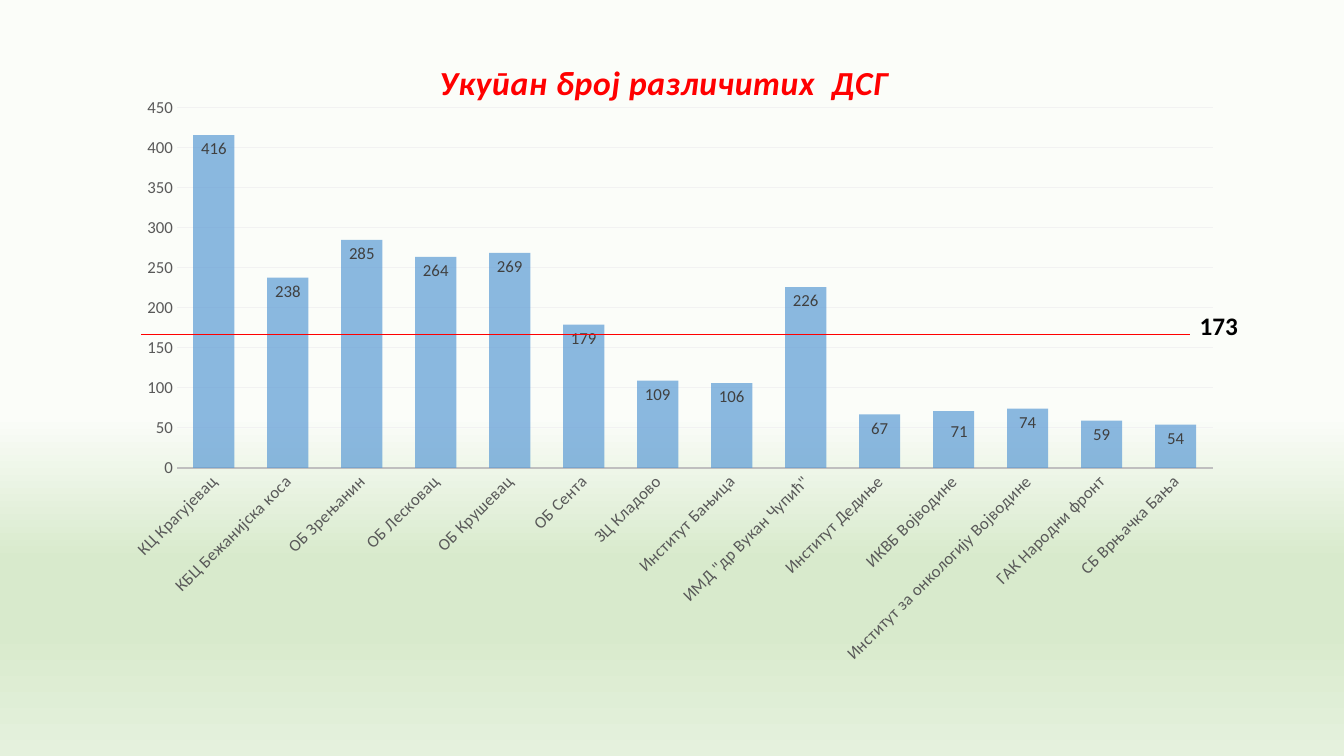
import pptx
import pptx.chart.data
import pptx.dml.color
import pptx.enum.chart
import pptx.enum.shapes
import pptx.enum.text
import pptx.oxml
import pptx.oxml.ns
import pptx.util
from lxml import etree

Inches = pptx.util.Inches
Pt = pptx.util.Pt
RGBColor = pptx.dml.color.RGBColor
qn = pptx.oxml.ns.qn

RED = RGBColor(0xFF, 0x00, 0x00)
BLACK = RGBColor(0x00, 0x00, 0x00)
BLUE = RGBColor(0x5B, 0x9B, 0xD5)
AXIS_TEXT = RGBColor(0x59, 0x59, 0x59)
LABEL_TEXT = RGBColor(0x40, 0x40, 0x40)
AXIS_LINE = RGBColor(0xBF, 0xBF, 0xBF)
GRID_LINE = RGBColor(0xF2, 0xF2, 0xF2)
PALE = RGBColor(0xFB, 0xFD, 0xF9)
GREEN = RGBColor(0xD8, 0xEA, 0xCC)
LIGHT_GREEN = RGBColor(0xE5, 0xF1, 0xDD)

GROUP_COUNTS = {
    "КЦ Крагујевац": 416,
    "КБЦ Бежанијска коса": 238,
    "ОБ Зрењанин": 285,
    "ОБ Лесковац": 264,
    "ОБ Крушевац": 269,
    "ОБ Сента": 179,
    "ЗЦ Кладово": 109,
    "Институт Бањица": 106,
    'ИМД "др Вукан Чупић"': 226,
    "Институт Дедиње": 67,
    "ИКВБ Војводине": 71,
    "Институт за онкологију Војводине": 74,
    "ГАК Народни фронт": 59,
    "СБ Врњачка Бања": 54,
}


def manual_layout(**settings):
    """Return a c:layout element holding the given settings in order."""
    layout = etree.Element(qn("c:layout"))
    manual = etree.SubElement(layout, qn("c:manualLayout"))
    for name, value in settings.items():
        etree.SubElement(manual, qn("c:" + name)).set("val", str(value))
    return pptx.oxml.parse_xml(etree.tostring(layout))


class Page:
    font_name = "Calibri"
    language = "sr-Cyrl-RS"

    def __init__(self, deck):
        self.slide = deck.slides.add_slide(deck.slide_layouts[6])

    def style(self, font, size, color, bold=False, italic=False):
        font.name = self.font_name
        font.size = Pt(size)
        font.color.rgb = color
        font.bold = bold
        font.italic = italic

    def letter_spacing(self, font, hundredths):
        font._element.set("lang", self.language)
        font._element.set("spc", str(hundredths))

    def background(self, stops):
        fill = self.slide.background.fill
        fill.gradient()
        fill.gradient_angle = 270
        stop_list = self.slide.background._cSld.find(".//" + qn("a:gsLst"))
        for stop in list(stop_list):
            stop_list.remove(stop)
        for percent, color in stops:
            stop = etree.SubElement(stop_list, qn("a:gs"), pos=str(percent * 1000))
            etree.SubElement(stop, qn("a:srgbClr"), val=str(color))

    def column_chart(self, left, top, width, height, counts):
        data = pptx.chart.data.CategoryChartData(number_format="0")
        data.categories = list(counts)
        data.add_series("Series 1", list(counts.values()))
        chart = self.slide.shapes.add_chart(
            pptx.enum.chart.XL_CHART_TYPE.COLUMN_CLUSTERED,
            Inches(left), Inches(top), Inches(width), Inches(height), data).chart
        chart.has_legend = False
        self.style(chart.font, 10, BLACK)
        area = chart._chartSpace.chart.plotArea
        for layout in area.findall(qn("c:layout")):
            area.remove(layout)
        area.insert(0, manual_layout(layoutTarget="inner", xMode="edge", yMode="edge",
                                     x=0.06, y=0.105, w=0.929, h=0.567))
        return chart

    def chart_title(self, chart, text, x, y):
        title = chart.chart_title
        span = title.text_frame.paragraphs[0].add_run()
        span.text = text
        self.style(span.font, 24, RED, bold=True, italic=True)
        self.letter_spacing(span.font, 50)
        element = title._element
        for layout in element.findall(qn("c:layout")):
            element.remove(layout)
        element.find(qn("c:tx")).addnext(
            manual_layout(xMode="edge", yMode="edge", x=x, y=y))
        title.include_in_layout = False

    def axes(self, chart, maximum, step):
        for axis in (chart.category_axis, chart.value_axis):
            axis.major_tick_mark = pptx.enum.chart.XL_TICK_MARK.NONE
            axis.minor_tick_mark = pptx.enum.chart.XL_TICK_MARK.NONE
            self.style(axis.tick_labels.font, 12, AXIS_TEXT)
        # Slanted category names on a grey base line
        names = chart.category_axis
        self.letter_spacing(names.tick_labels.font, 20)
        names.format.line.color.rgb = AXIS_LINE
        names.format.line.width = Pt(1.25)
        names._element.find(qn("c:txPr")).find(qn("a:bodyPr")).set("rot", "-2700000")
        # Value scale with faint grid lines
        scale = chart.value_axis
        scale.minimum_scale, scale.maximum_scale = 0, maximum
        scale.major_unit = step
        scale.tick_labels.number_format = "0"
        scale.tick_labels.number_format_is_linked = False
        scale.format.line.fill.background()
        scale.major_gridlines.format.line.color.rgb = GRID_LINE
        scale.major_gridlines.format.line.width = Pt(0.75)

    def columns(self, chart):
        plot = chart.plots[0]
        plot.gap_width, plot.overlap, plot.vary_by_categories = 80, 25, False
        series = plot.series[0]
        series.format.fill.solid()
        series.format.fill.fore_color.rgb = BLUE
        color = series._element.find(qn("c:spPr")).find(".//" + qn("a:srgbClr"))
        etree.SubElement(color, qn("a:alpha"), val="70000")
        labels = series.data_labels
        labels.show_value = True
        labels.number_format = "0"
        labels.number_format_is_linked = False
        labels.position = pptx.enum.chart.XL_LABEL_POSITION.INSIDE_END
        self.style(labels.font, 12, LABEL_TEXT)
        return series

    def shift_label(self, series, index, x, y):
        label = series.points[index].data_label
        label.position = pptx.enum.chart.XL_LABEL_POSITION.INSIDE_END
        self.style(label.font, 12, LABEL_TEXT)
        element = series._element.find(".//" + qn("c:dLbl"))
        element.find(qn("c:idx")).addnext(manual_layout(x=x, y=y))

    def line(self, left, right, y, color, width):
        connector = self.slide.shapes.add_connector(
            pptx.enum.shapes.MSO_CONNECTOR.STRAIGHT,
            Inches(left), Inches(y), Inches(right), Inches(y))
        connector.line.color.rgb = color
        connector.line.width = Pt(width)
        etree.SubElement(connector._element.spPr, qn("a:effectLst"))

    def text(self, left, top, width, height, words):
        box = self.slide.shapes.add_textbox(
            Inches(left), Inches(top), Inches(width), Inches(height))
        box.text_frame.word_wrap = False
        box.text_frame.auto_size = pptx.enum.text.MSO_AUTO_SIZE.SHAPE_TO_FIT_TEXT
        span = box.text_frame.paragraphs[0].add_run()
        span.text = words
        self.style(span.font, 18, BLACK, bold=True)


def main():
    deck = pptx.Presentation()
    deck.slide_width, deck.slide_height = Inches(13.33), Inches(7.5)
    page = Page(deck)
    page.background([(55, PALE), (74, GREEN), (83, GREEN), (100, LIGHT_GREEN)])

    # Column chart of the counts per hospital
    chart = page.column_chart(1.09, 0.41, 11.06, 6.3, GROUP_COUNTS)
    page.chart_title(chart, "Укупан број различитих  ДСГ", 0.29, 0.02)
    page.axes(chart, 450, 50)
    series = page.columns(chart)
    page.shift_label(series, 10, 0.005, 0.01)

    # Average line with its value
    page.line(1.4, 11.8, 3.32, RED, 1.25)
    page.text(11.8, 3.03, 0.59, 0.4, "173")

    deck.save("out.pptx")


if __name__ == "__main__":
    main()
